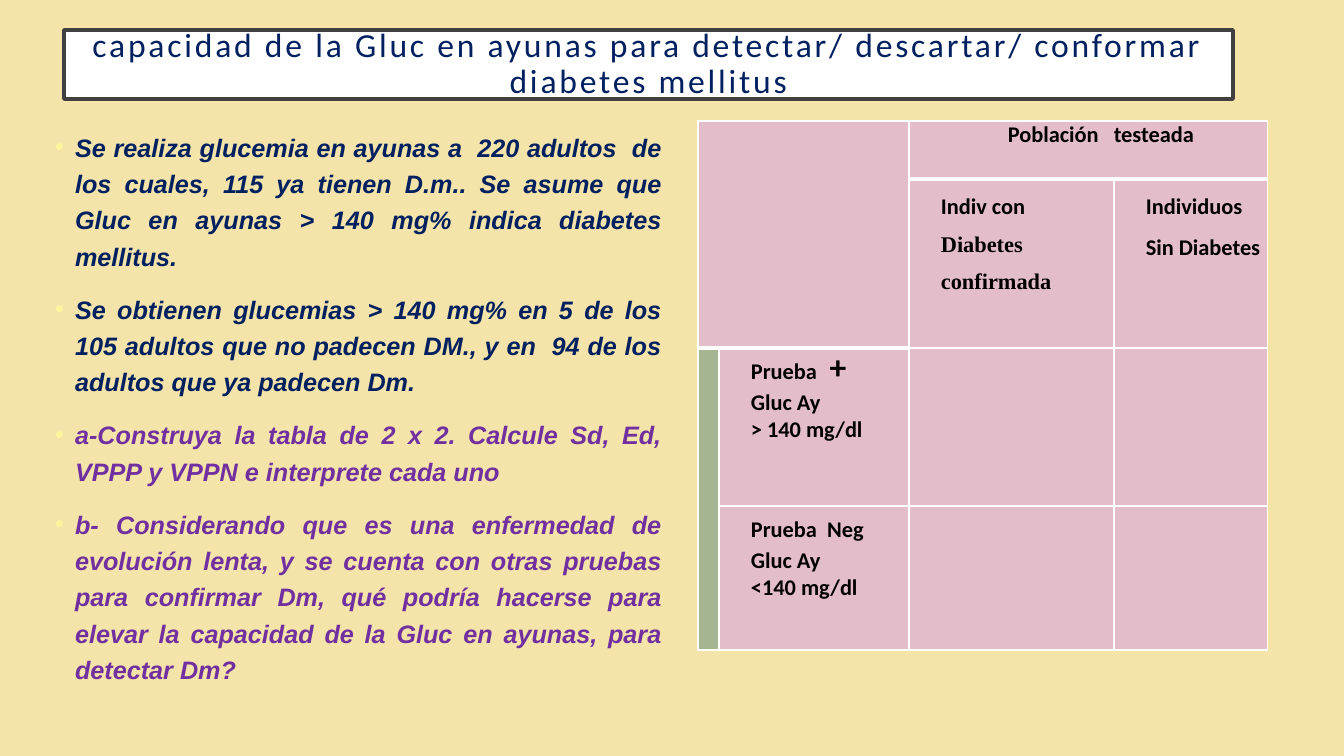
from lxml.etree import SubElement
from pptx import Presentation
from pptx.dml.color import RGBColor
from pptx.enum.text import MSO_ANCHOR, MSO_AUTO_SIZE, PP_ALIGN
from pptx.oxml.ns import qn
from pptx.util import Pt

PX = 914400 / 100.8
NAVY, PURPLE, PINK, GREEN, WHITE = "002060", "7030A0", "E3BECA", "A5B592", "FFFFFF"

TITLE = "capacidad de la Gluc en ayunas para detectar/ descartar/ conformar diabetes mellitus"
EXERCISE = [
    ("Se realiza glucemia en ayunas a  220 adultos  de los cuales, 115 ya tienen D.m.. "
     "Se asume que Gluc en ayunas > 140 mg% indica diabetes mellitus.", NAVY),
    ("Se obtienen glucemias > 140 mg% en 5 de los 105 adultos que no padecen DM., "
     "y en  94 de los adultos que ya padecen Dm.", NAVY),
    ("a-Construya la tabla de 2 x 2. Calcule Sd, Ed, VPPP y VPPN e interprete cada uno", PURPLE),
    ("b- Considerando que es una enfermedad de evolución lenta, y se cuenta con otras "
     "pruebas para confirmar Dm, qué podría hacerse para elevar la capacidad de la Gluc "
     "en ayunas, para detectar Dm?", PURPLE),
]
COLS, ROWS = (21, 190, 205, 154), (58, 169, 158, 144)
CELL_TEXT = {
    (0, 2): ([[("Población   testeada", 16, "Calibri")]], PP_ALIGN.CENTER, 1),
    (1, 2): ([[("Indiv con", 16, "Calibri")],
              [("Diabetes confirmada", 16, "Times New Roman")]], PP_ALIGN.JUSTIFY, 1.5),
    (1, 3): ([[("Individuos", 16, "Calibri")],
              [("Sin Diabetes", 16, "Calibri")]], PP_ALIGN.JUSTIFY, 1.5),
    (2, 1): ([[("Prueba ", 16, "Calibri"), (" +", 24, "Calibri")],
              [("Gluc Ay", 16, "Calibri")],
              [("> 140 mg/dl", 16, "Calibri")]], PP_ALIGN.JUSTIFY, 1),
    (3, 1): ([[("Prueba  Neg", 16, "Calibri"), (" ", 24, "Calibri")],
              [("Gluc Ay", 16, "Calibri")],
              [("<140 mg/dl", 16, "Calibri")]], PP_ALIGN.JUSTIFY, 1),
}


def px(n):
    """Turn pixels into EMU."""
    return round(n * PX)


def rgb(hex_color):
    """Turn a hex string into a colour."""
    return RGBColor.from_string(hex_color)


def paint(fill, color):
    """Give a fill one solid colour."""
    fill.solid()
    fill.fore_color.rgb = rgb(color)


def place(sp, box):
    """Move a shape into a box given in pixels."""
    sp.left, sp.top, sp.width, sp.height = map(px, box)


def add_run(p, text, size, font, color, bold=False, italic=False):
    """Add one formatted run to a paragraph."""
    r = p.add_run()
    r.text = text
    r.font.size, r.font.name = Pt(size), font
    r.font.bold, r.font.italic = bold, italic
    r.font.color.rgb = rgb(color)
    return r


def next_paragraph(tf, i):
    """Return the first paragraph, or a new one after it."""
    return tf.add_paragraph() if i else tf.paragraphs[0]


def indent(p, left, first=0):
    """Set the left margin and first-line indent of a paragraph."""
    pPr = p._p.get_or_add_pPr()
    pPr.set("marL", str(px(left)))
    pPr.set("indent", str(px(first)))
    return pPr


def fill_title(sp, box):
    """Set the framed title."""
    place(sp, box)
    paint(sp.fill, WHITE)
    sp.line.color.rgb = rgb("404040")
    sp.line.width = Pt(2.5)
    tf = sp.text_frame
    tf.word_wrap, tf.auto_size = True, MSO_AUTO_SIZE.NONE
    tf.vertical_anchor = MSO_ANCHOR.MIDDLE
    tf.margin_left = tf.margin_right = tf.margin_top = tf.margin_bottom = px(20)
    p = tf.paragraphs[0]
    p.alignment, p.line_spacing = PP_ALIGN.CENTER, 0.9
    r = add_run(p, TITLE, 24, "Calibri", NAVY)
    r._r.get_or_add_rPr().set("spc", "200")


def fill_exercise(sp, box):
    """Set the bulleted exercise text."""
    place(sp, box)
    tf = sp.text_frame
    tf.word_wrap, tf.auto_size = True, MSO_AUTO_SIZE.NONE
    tf.vertical_anchor = MSO_ANCHOR.TOP
    for i, (text, color) in enumerate(EXERCISE):
        p = next_paragraph(tf, i)
        p.alignment, p.line_spacing = PP_ALIGN.JUSTIFY, 1.2
        p.space_before = p.space_after = Pt(6)
        pPr = indent(p, 20, -25)
        SubElement(SubElement(pPr, qn("a:buClr")), qn("a:srgbClr"), val="FDF59C")
        SubElement(pPr, qn("a:buFont"), typeface="Arial")
        SubElement(pPr, qn("a:buChar"), char="•")
        add_run(p, text, 18, "Arial", color, True, True)


def under_header(row, col):
    """Tell whether the bottom edge of a cell closes the header."""
    return row == (1 if col < 2 else 0)


def set_borders(cell, row, col):
    """Draw white cell borders, thick below the header."""
    widths = {"L": 1, "R": 1,
              "T": 3 if under_header(row - 1, col) else 1,
              "B": 3 if under_header(row, col) else 1}
    tcPr = cell._tc.get_or_add_tcPr()
    for i, (side, width) in enumerate(widths.items()):
        ln = SubElement(tcPr, qn("a:ln" + side), w=str(Pt(width)))
        SubElement(SubElement(ln, qn("a:solidFill")), qn("a:srgbClr"), val=WHITE)
        tcPr.insert(i, ln)


def fill_cell(cell, lines, align, spacing):
    """Write the lines of one table cell."""
    for i, runs in enumerate(lines):
        p = next_paragraph(cell.text_frame, i)
        p.alignment, p.line_spacing = align, spacing
        indent(p, 25)
        for text, size, font in runs:
            add_run(p, text, size, font, "000000", True)


def add_two_by_two(s, box):
    """Add the two-by-two table of test against disease."""
    table = s.shapes.add_table(len(ROWS), len(COLS), *map(px, box)).table
    table.first_row = table.horz_banding = False
    for col, width in zip(table.columns, COLS):
        col.width = px(width)
    for row, height in zip(table.rows, ROWS):
        row.height = px(height)
    for r in range(len(ROWS)):
        for c in range(len(COLS)):
            cell = table.cell(r, c)
            cell.margin_left = cell.margin_right = px(7)
            cell.margin_top = cell.margin_bottom = 0
            paint(cell.fill, GREEN if r > 1 and c == 0 else PINK)
            set_borders(cell, r, c)
            if (r, c) in CELL_TEXT:
                fill_cell(cell, *CELL_TEXT[r, c])
    for first, last in (((0, 0), (1, 1)), ((0, 2), (0, 3)), ((2, 0), (3, 0))):
        table.cell(*first).merge(table.cell(*last))


def main():
    """Build and save the slide."""
    prs = Presentation()
    prs.slide_width, prs.slide_height = px(1344), px(756)
    s = prs.slides.add_slide(prs.slide_layouts[1])
    paint(s.background.fill, "F5E4A9")
    fill_title(s.shapes.title, (64, 30, 1169, 69))
    fill_exercise(s.placeholders[1], (45, 121, 627, 605))
    add_two_by_two(s, (698, 121, sum(COLS), sum(ROWS)))
    prs.save("out.pptx")


if __name__ == "__main__":
    main()
